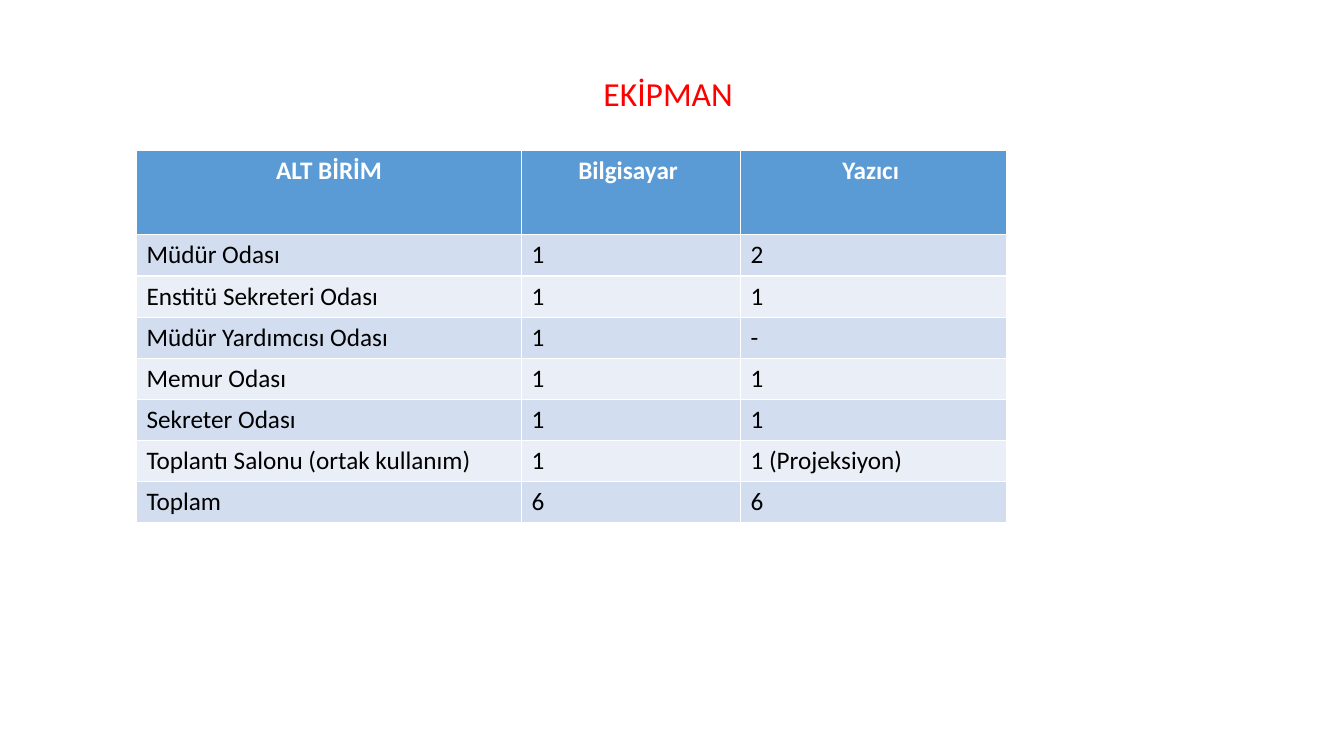
from pptx import Presentation
from pptx.dml.color import RGBColor
from pptx.enum.text import MSO_ANCHOR, PP_ALIGN
from pptx.util import Pt

CENTER = PP_ALIGN.CENTER
LEFT = PP_ALIGN.LEFT
MIDDLE = MSO_ANCHOR.MIDDLE
RED = RGBColor(0xFF, 0x00, 0x00)
WHITE = RGBColor(0xFF, 0xFF, 0xFF)
BLACK = RGBColor(0x00, 0x00, 0x00)
HEADER_BLUE = RGBColor(0x5B, 0x9B, 0xD5)
BAND_DARK = RGBColor(0xD2, 0xDE, 0xEF)
BAND_LIGHT = RGBColor(0xEA, 0xEF, 0xF7)
FONT = "Calibri"

COLUMN_WIDTHS = [275, 156.5, 190]
HEADER_HEIGHT = 60.5
ROW_HEIGHT = 29.4
EQUIPMENT = [
    ("ALT BİRİM", "Bilgisayar ", "Yazıcı "),
    ("Müdür Odası", "1", "2"),
    ("Enstitü Sekreteri Odası", "1", "1"),
    ("Müdür Yardımcısı Odası", "1", "-"),
    ("Memur Odası", "1", "1"),
    ("Sekreter Odası", "1", "1"),
    ("Toplantı Salonu (ortak kullanım)", "1", "1 (Projeksiyon)"),
    ("Toplam", "6", "6"),
]


def add_span(para, text, size, color, bold=False):
    span = para.add_run()
    span.text = text
    span.font.name = FONT
    span.font.size = Pt(size)
    span.font.bold = bold
    span.font.color.rgb = color


deck = Presentation()
deck.slide_width = Pt(960)
deck.slide_height = Pt(540)
page = deck.slides.add_slide(deck.slide_layouts[5])

title = page.shapes.title
title.left, title.top = Pt(66), Pt(28.75)
title.width, title.height = Pt(828), Pt(78.5)
title.text_frame.vertical_anchor = MIDDLE
title_para = title.text_frame.paragraphs[0]
title_para.alignment = CENTER
title_para.line_spacing = 0.9
add_span(title_para, "EKİPMAN ", 24, RED)

table_height = HEADER_HEIGHT + ROW_HEIGHT * (len(EQUIPMENT) - 1)
table = page.shapes.add_table(
    len(EQUIPMENT), len(COLUMN_WIDTHS),
    Pt(97.5), Pt(107.25), Pt(sum(COLUMN_WIDTHS)), Pt(table_height),
).table
for column, width in zip(table.columns, COLUMN_WIDTHS):
    column.width = Pt(width)

for row_index, values in enumerate(EQUIPMENT):
    is_header = row_index == 0
    band = BAND_DARK if row_index % 2 else BAND_LIGHT
    table.rows[row_index].height = Pt(HEADER_HEIGHT if is_header else ROW_HEIGHT)
    for column_index, value in enumerate(values):
        cell = table.cell(row_index, column_index)
        cell.fill.solid()
        cell.fill.fore_color.rgb = HEADER_BLUE if is_header else band
        para = cell.text_frame.paragraphs[0]
        para.alignment = CENTER if is_header else LEFT
        add_span(para, value, 18, WHITE if is_header else BLACK, is_header)

deck.save("out.pptx")
